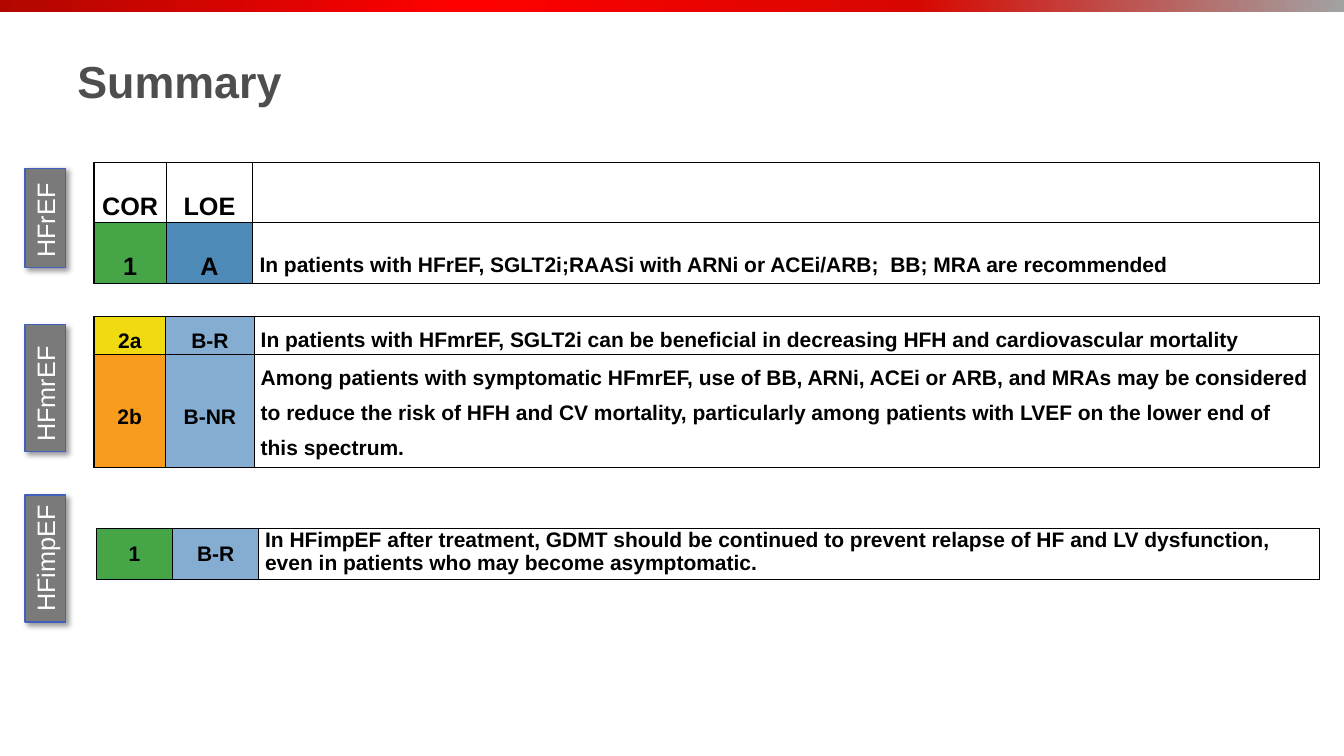
from lxml.etree import SubElement
from pptx import Presentation
from pptx.dml.color import RGBColor
from pptx.enum.shapes import MSO_SHAPE as Shape
from pptx.enum.text import MSO_ANCHOR as Anchor, PP_ALIGN as Align
from pptx.oxml.ns import qn
from pptx.util import Cm, Pt

BLACK = RGBColor(0x00, 0x00, 0x00)
WHITE = RGBColor(0xFF, 0xFF, 0xFF)
TITLE_GRAY = RGBColor(0x4D, 0x4E, 0x4D)
LABEL_GRAY = RGBColor(0x7A, 0x7A, 0x7A)
LABEL_EDGE = RGBColor(0x42, 0x5F, 0xBD)
GREEN = RGBColor(0x45, 0xA5, 0x47)
YELLOW = RGBColor(0xF0, 0xDA, 0x10)
ORANGE = RGBColor(0xF9, 0x9B, 0x1C)
BLUE = RGBColor(0x4E, 0x8A, 0xB7)
LIGHT_BLUE = RGBColor(0x85, 0xAD, 0xD1)

BAR_STOPS = [(0, "B10700"), (14, "D00400"), (34, "FF0000"), (68, "D70700"), (100, "A2A2A2")]

# Each cell is (text, fill); lengths in cm, sizes in points.
TABLES = [
    {
        "left": 2.37, "top": 4.09, "columns": (1.82, 2.18, 26.88), "heights": (0.92, 1.45),
        "margin": 0.17, "spacing": 2.0, "grade_size": 18, "text_anchor": Anchor.MIDDLE,
        "rows": [
            (("COR", None), ("LOE", None), ("", None)),
            (("1", GREEN), ("A", BLUE),
             ("In patients with HFrEF, SGLT2i;RAASi with ARNi or ACEi/ARB;  BB; MRA are recommended", None)),
        ],
    },
    {
        "left": 2.37, "top": 7.98, "columns": (1.8, 2.24, 26.84), "heights": (0.92, 2.29),
        "margin": 0.16, "spacing": 1.5, "grade_size": 15, "text_anchor": Anchor.TOP,
        "rows": [
            (("2a", YELLOW), ("B-R", LIGHT_BLUE),
             ("In patients with HFmrEF, SGLT2i can be beneficial in decreasing HFH "
              "and cardiovascular mortality", None)),
            (("2b", ORANGE), ("B-NR", LIGHT_BLUE),
             ("Among patients with symptomatic HFmrEF, use of BB, ARNi, ACEi or ARB, and MRAs "
              "may be considered to reduce the risk of HFH and CV mortality, particularly among "
              "patients with LVEF on the lower end of this spectrum.", None)),
        ],
    },
    {
        "left": 2.43, "top": 13.31, "columns": (1.92, 2.17, 26.74), "heights": (1.3,),
        "margin": 0.16, "spacing": 1.0, "grade_size": 15, "text_anchor": Anchor.TOP,
        "rows": [
            (("1", GREEN), ("B-R", LIGHT_BLUE),
             ("In HFimpEF after treatment, GDMT should be continued to prevent relapse of HF and "
              "LV dysfunction, even in patients who may become asymptomatic.", None)),
        ],
    },
]

# Text and length along the slide's edge
LABELS = [("HFrEF", 2.5), ("HFmrEF", 3.2), ("HFimpEF", 3.2)]
LABEL_CENTER_X, LABEL_FIRST_Y, LABEL_STEP, LABEL_THICKNESS = 1.14, 5.49, 4.29, 1.02


def set_all(target, values):
    for name, value in values.items():
        setattr(target, name, value)


def write(paragraph, text, size, color, bold=True):
    span = paragraph.add_run()
    span.text = text
    set_all(span.font, {"name": "Arial", "size": Pt(size), "bold": bold})
    span.font.color.rgb = color


def add_color(parent, value):
    return SubElement(parent, qn("a:srgbClr"), val=str(value))


def add_bar(page, width):
    bar = page.shapes.add_shape(Shape.RECTANGLE, 0, 0, width, Cm(0.3))
    bar.shadow.inherit = False
    bar.line.fill.background()
    bar.fill.gradient()
    bar.fill.gradient_angle = 0
    stops = bar.element.spPr.find(qn("a:gradFill")).find(qn("a:gsLst"))
    for stop in list(stops):
        stops.remove(stop)
    for percent, color in BAR_STOPS:
        add_color(SubElement(stops, qn("a:gs"), pos=str(percent * 1000)), color)


def add_title(page):
    box = page.shapes.add_textbox(Cm(1.7), Cm(0.18), Cm(29.85), Cm(3.68))
    set_all(box.text_frame, {"word_wrap": True, "vertical_anchor": Anchor.MIDDLE})
    write(box.text_frame.paragraphs[0], "Summary", 32, TITLE_GRAY)


def add_borders(cell):
    properties = cell._tc.get_or_add_tcPr()
    for side in ("lnL", "lnR", "lnT", "lnB"):
        edge = SubElement(properties, qn(f"a:{side}"), w=str(Pt(1)))
        add_color(SubElement(edge, qn("a:solidFill")), BLACK)


def fill_cell(cell, text, color, is_grade, layout):
    add_borders(cell)
    if color is None:
        cell.fill.background()
    else:
        cell.fill.solid()
        cell.fill.fore_color.rgb = color
    set_all(cell, {
        "margin_left": Cm(layout["margin"]), "margin_right": Cm(layout["margin"]),
        "margin_top": 0, "margin_bottom": 0,
        "vertical_anchor": Anchor.MIDDLE if is_grade else layout["text_anchor"],
    })
    if text:
        para = cell.text_frame.paragraphs[0]
        set_all(para, {
            "alignment": Align.CENTER if is_grade else Align.LEFT,
            "line_spacing": layout["spacing"],
        })
        write(para, text, layout["grade_size"] if is_grade else 15, BLACK)


def add_recommendations(page, layout):
    columns, heights = layout["columns"], layout["heights"]
    table = page.shapes.add_table(
        len(heights), len(columns), Cm(layout["left"]), Cm(layout["top"]),
        Cm(sum(columns)), Cm(sum(heights))).table
    set_all(table, {"first_row": False, "horz_banding": False})
    for column, width in zip(table.columns, columns):
        column.width = Cm(width)
    for row, height, contents in zip(table.rows, heights, layout["rows"]):
        row.height = Cm(height)
        for index, (text, color) in enumerate(contents):
            fill_cell(row.cells[index], text, color, index < 2, layout)


def add_label(page, text, length, center_y):
    label = page.shapes.add_shape(
        Shape.RECTANGLE, Cm(LABEL_CENTER_X - length / 2), Cm(center_y - LABEL_THICKNESS / 2),
        Cm(length), Cm(LABEL_THICKNESS))
    label.rotation = 270
    label.fill.solid()
    label.fill.fore_color.rgb = LABEL_GRAY
    label.line.color.rgb = LABEL_EDGE
    label.line.width = Pt(1)
    label.shadow.inherit = False
    shadow = SubElement(
        label.element.spPr.find(qn("a:effectLst")), qn("a:outerShdw"),
        blurRad=str(Pt(4)), dist=str(Pt(3)), dir=str(45 * 60000), rotWithShape="0")
    SubElement(add_color(shadow, BLACK), qn("a:alpha"), val="40000")
    set_all(label.text_frame, {"word_wrap": True, "vertical_anchor": Anchor.TOP})
    para = label.text_frame.paragraphs[0]
    para.alignment = Align.LEFT
    write(para, text, 18, WHITE, bold=False)


def main():
    deck = Presentation()
    set_all(deck, {"slide_width": Cm(33.87), "slide_height": Cm(19.05)})
    page = deck.slides.add_slide(deck.slide_layouts[6])
    add_bar(page, deck.slide_width)
    add_title(page)
    for layout in TABLES:
        add_recommendations(page, layout)
    for index, (text, length) in enumerate(LABELS):
        add_label(page, text, length, LABEL_FIRST_Y + index * LABEL_STEP)
    deck.save("out.pptx")


if __name__ == "__main__":
    main()
